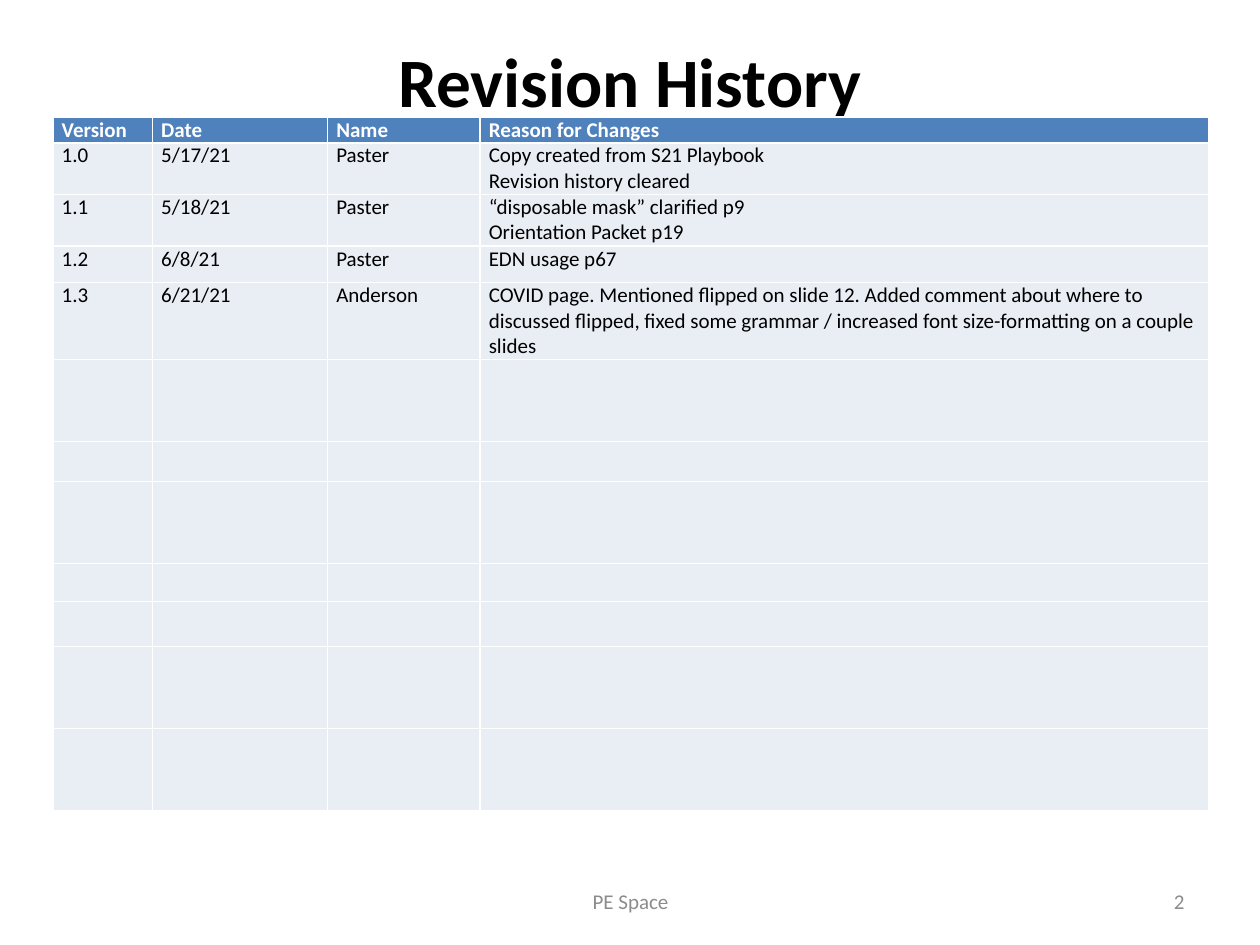
from pptx import Presentation
from pptx import util as u
from pptx.dml.color import RGBColor
from pptx.enum import text

THEME = {
    "font": "Calibri",
    "title": 39.6, "body": 12,
    "ink": "000000", "header_ink": "FFFFFF", "muted": "8C8C8C",
    "header_fill": "4F81BD", "row_fill": "E9EDF4",
}
HEADINGS = ["Version", "Date", "Name", "Reason for Changes"]
REVISIONS = [
    ["1.0", "5/17/21", "Paster", "Copy created from S21 Playbook\nRevision history cleared"],
    ["1.1", "5/18/21", "Paster", "“disposable mask” clarified p9\nOrientation Packet p19"],
    ["1.2", "6/8/21", "Paster", "EDN usage p67"],
    ["1.3", "6/21/21", "Anderson",
     "COVID page. Mentioned flipped on slide 12. Added comment about where to discussed "
     "flipped, fixed some grammar / increased font size-formatting on a couple slides"],
]
COLUMN_WIDTHS = [0.79, 1.39, 1.21, 5.78]
ROW_HEIGHTS = [0.2, 0.41, 0.41, 0.29, 0.61, 0.65, 0.32, 0.65, 0.3, 0.36, 0.65, 0.65]


def style(frame, size, color, bold=False, align=text.PP_ALIGN.LEFT):
    """Format every paragraph of a text frame with theme values."""
    look = {"name": THEME["font"], "size": u.Pt(THEME[size]), "bold": bold}
    for paragraph in frame.paragraphs:
        paragraph.alignment = align
        for name, value in look.items():
            setattr(paragraph.font, name, value)
        paragraph.font.color.rgb = RGBColor.from_string(THEME[color])


prs = Presentation()
prs.slide_width, prs.slide_height = u.Inches(10), u.Inches(7.5)
W, H = prs.slide_width, prs.slide_height
slide = prs.slides.add_slide(prs.slide_layouts[5])

# Title
title = slide.shapes.title
title_box = {"left": 0.05 * W, "top": 0.04 * H, "width": 0.9 * W, "height": H / 6}
for name, value in title_box.items():
    setattr(title, name, int(value))
title.text_frame.text = "Revision History"
title_format = {"auto_size": text.MSO_AUTO_SIZE.NONE, "margin_top": 0,
                "vertical_anchor": text.MSO_ANCHOR.TOP}
for name, value in title_format.items():
    setattr(title.text_frame, name, value)
style(title.text_frame, "title", "ink", bold=True, align=text.PP_ALIGN.CENTER)

# Revision table, with empty rows left for later entries
history = slide.shapes.add_table(
    len(ROW_HEIGHTS), len(COLUMN_WIDTHS), u.Inches(0.42), u.Inches(0.93),
    u.Inches(sum(COLUMN_WIDTHS)), u.Inches(sum(ROW_HEIGHTS))).table
history.horz_banding = False
for column, width in zip(history.columns, COLUMN_WIDTHS):
    column.width = u.Inches(width)
for row, height in zip(history.rows, ROW_HEIGHTS):
    row.height = u.Inches(height)

blank_rows = len(ROW_HEIGHTS) - len(REVISIONS) - 1
entries = [HEADINGS] + REVISIONS + [[""] * len(HEADINGS)] * blank_rows
cell_margins = {"margin_left": u.Inches(0.07), "margin_right": u.Inches(0.07),
                "margin_top": 0, "margin_bottom": 0}
for r, entry in enumerate(entries):
    is_header = r == 0
    for c, content in enumerate(entry):
        cell = history.cell(r, c)
        cell.text = content
        for name, value in cell_margins.items():
            setattr(cell, name, value)
        cell.fill.solid()
        cell.fill.fore_color.rgb = RGBColor.from_string(
            THEME["header_fill" if is_header else "row_fill"])
        style(cell.text_frame, "body", "header_ink" if is_header else "ink", bold=is_header)

# Footer and page number
for content, left, width, align in [
    ("PE Space", 0.342, 0.317, text.PP_ALIGN.CENTER),
    ("2", 0.717, 0.233, text.PP_ALIGN.RIGHT),
]:
    footer = slide.shapes.add_textbox(
        int(left * W), u.Inches(6.95), int(width * W), u.Inches(0.4)).text_frame
    footer.text = content
    footer.word_wrap = True
    footer.vertical_anchor = text.MSO_ANCHOR.MIDDLE
    style(footer, "body", "muted", align=align)

prs.save("out.pptx")
